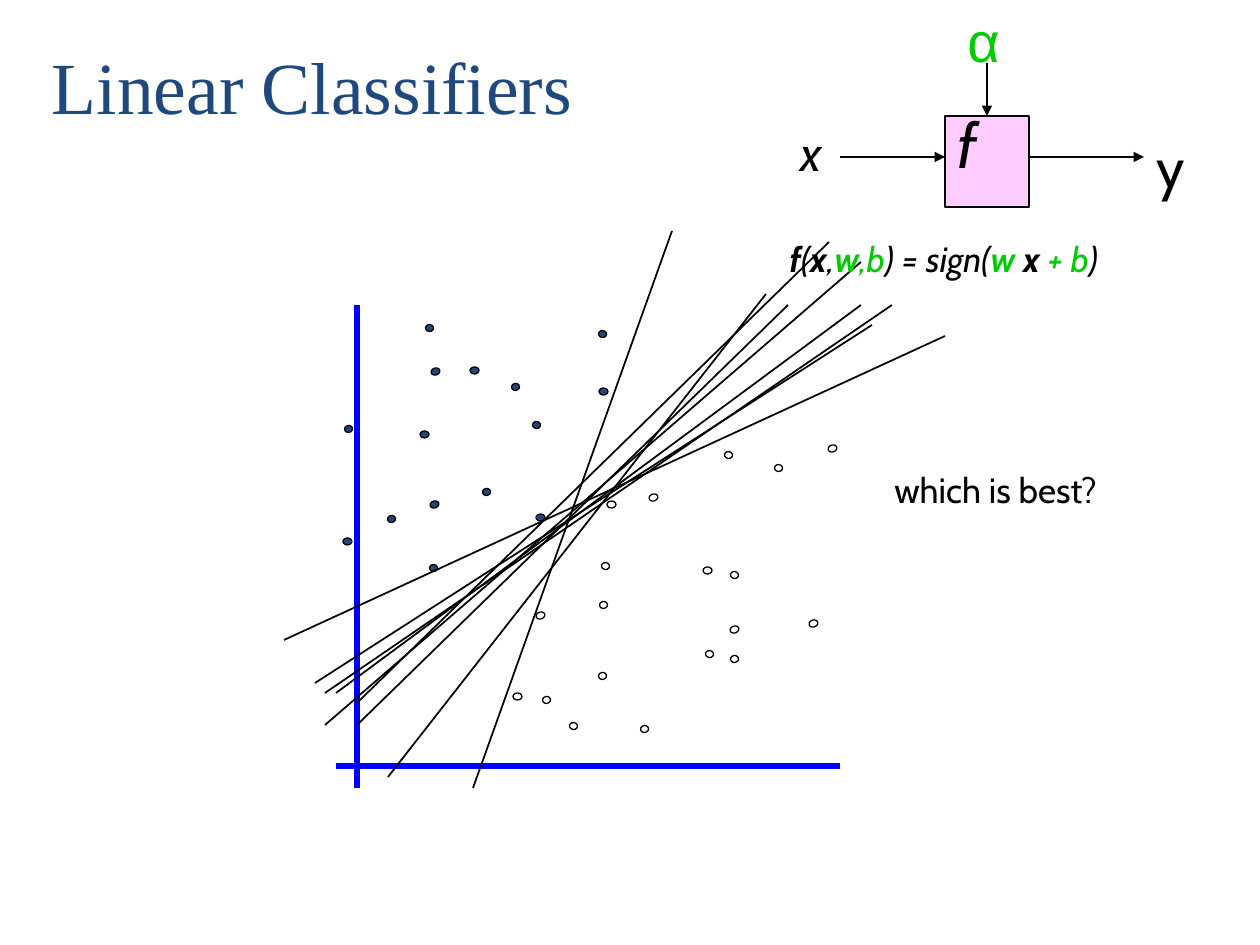
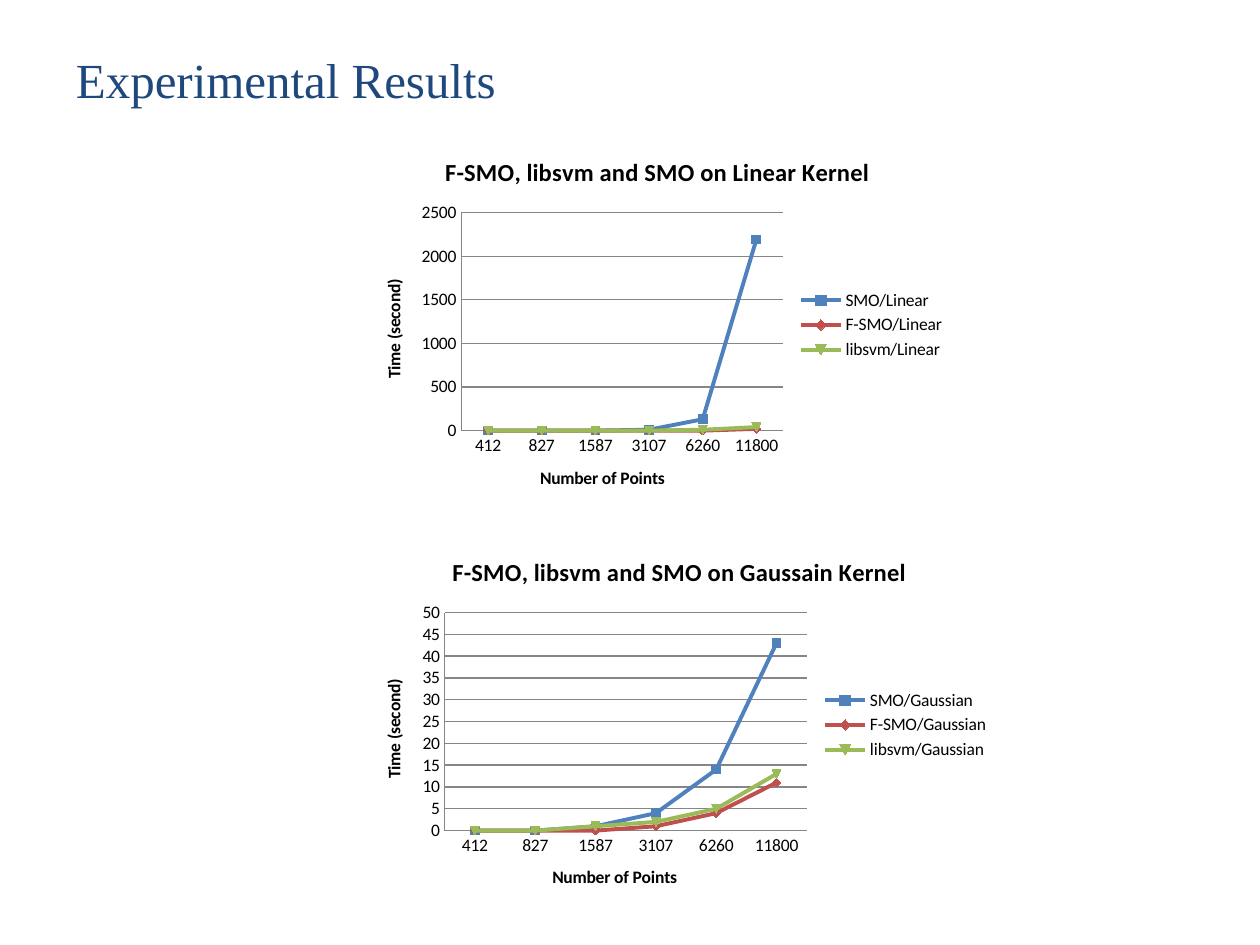
"""Build two slides: linear classifiers and experimental results."""
from lxml import etree
from pptx import Presentation
from pptx import util as u
from pptx.chart.data import CategoryChartData
from pptx.dml.color import RGBColor
from pptx.enum import chart as ch
from pptx.enum import shapes, text
from pptx.oxml.ns import qn

COLORS = {"title": "1F497D", "ink": "000000", "paper": "FFFFFF", "axis": "0000FF",
          "param": "00CC00", "box": "FFCCFF", "grid": "868686"}
SERIES_COLORS = ["4F81BD", "C0504D", "9BBB59"]
TITLE_FONT, BODY_FONT, CHART_FONT = "Times New Roman", "Cabin", "Calibri"
INSET = 13

AXES = [(357, 305, 357, 788), (336, 766, 840, 766)]
SEPARATORS = [
    (473, 788, 672, 231), (315, 683, 872, 325), (357, 725, 788, 305),
    (284, 640, 945, 336), (336, 693, 861, 305), (325, 725, 861, 262),
    (357, 703, 829, 242), (388, 777, 766, 294), (325, 693, 892, 305),
]
DOTS = [
    {"angle": 0, "size": (9, 7),
     "title": [(343, 538), (599, 388), (470, 367), (536, 514), (420, 431)],
     "paper": [(513, 693), (607, 501), (703, 567)]},
    {"angle": 341.4, "size": (9, 7),
     "title": [(431, 368), (430, 501)],
     "paper": [(536, 612), (828, 445), (730, 626), (649, 494), (809, 620)]},
    {"angle": 98.3, "size": (7, 8),
     "title": [(533, 421), (430, 564), (599, 330), (426, 324)],
     "paper": [(570, 722), (731, 571), (602, 562), (775, 464), (725, 451), (706, 650)]},
    {"angle": 79.6, "size": (7, 8),
     "title": [(483, 488), (388, 515), (512, 383), (345, 425)],
     "paper": [(641, 725), (599, 672), (600, 601), (543, 696), (731, 655)]},
]
FUNCTION_BOX = (945, 116, 84, 91)
ARROWS = {"x": (840, 157, 945, 157), "alpha": (987, 63, 987, 116),
          "y": (1029, 157, 1144, 157)}
FORMULA = [("f", "ink", "bi"), ("(", "ink", "i"), ("x", "ink", "bi"), (",", "ink", "i"),
           ("w", "param", "bi"), (",b", "param", "i"), (") = sign(", "ink", "i"),
           ("w", "param", "bi"), (" x", "ink", "bi"), (" + b", "param", "i"),
           (")", "ink", "i")]
LABELS = [
    ((882, 462, 305, 55), [("which is best?", "ink", "")], 20, BODY_FONT),
    ((955, 0, 53, 79), [("α", "param", "")], 32, "Arial"),
    ((788, 116, 84, 72), [("x", "ink", "i")], 28, BODY_FONT),
    ((1144, 126, 116, 79), [("y", "ink", "")], 32, BODY_FONT),
    ((777, 231, 441, 54), FORMULA, 20, BODY_FONT),
]

POINTS = ["412", "827", "1587", "3107", "6260", "11800"]
CHARTS = [
    {"at": (357, 536, 645, 378), "title": "F-SMO, libsvm and SMO on Gaussain Kernel",
     "series": {"SMO/Gaussian": [0, 0, 1, 4, 14, 43],
                "F-SMO/Gaussian": [0, 0, 0, 1, 4, 11],
                "libsvm/Gaussian": [0, 0, 1, 2, 5, 13]}},
    {"at": (357, 136, 601, 378), "title": "F-SMO, libsvm and SMO on Linear Kernel",
     "series": {"SMO/Linear": [0, 0, 0, 10, 130, 2190],
                "F-SMO/Linear": [0, 0, 0, 0, 0, 20],
                "libsvm/Linear": [0, 0, 0, 0, 10, 40]}},
]


def px(*values):
    return [u.Emu(round(v * 914400 / 126)) for v in values]


def rgb(name):
    return RGBColor.from_string(COLORS.get(name, name))


def style(font, size, name, color, marks=""):
    font.size, font.name = u.Pt(size), name
    font.bold, font.italic = "b" in marks, "i" in marks
    font.color.rgb = rgb(color)


def add_titled_slide(prs, title, at, size, anchor, indent=INSET):
    s = prs.slides.add_slide(prs.slide_layouts[5])
    sp = s.shapes.title
    sp.left, sp.top, sp.width, sp.height = px(*at)
    tf = sp.text_frame
    tf.text = title
    tf.auto_size = text.MSO_AUTO_SIZE.NONE
    tf.vertical_anchor = anchor
    tf.margin_left, = px(indent)
    p = tf.paragraphs[0]
    p.alignment = text.PP_ALIGN.LEFT
    style(p.runs[0].font, size, TITLE_FONT, "title")
    return s


def add_line(s, ends, color="ink", width=1, arrow=False):
    line = s.shapes.add_connector(shapes.MSO_CONNECTOR.STRAIGHT, *px(*ends))
    line.line.color.rgb = rgb(color)
    line.line.width = u.Pt(width)
    if arrow:
        etree.SubElement(line.line._get_or_add_ln(), qn("a:tailEnd"), type="triangle")
    etree.SubElement(line._element.spPr, qn("a:effectLst"))
    return line


def add_solid(s, kind, at, fill, width):
    sp = s.shapes.add_shape(kind, *px(*at))
    sp.shadow.inherit = False
    sp.fill.solid()
    sp.fill.fore_color.rgb = rgb(fill)
    sp.line.color.rgb = rgb("ink")
    sp.line.width = u.Pt(width)
    return sp


def write_runs(tf, runs, size, font):
    tf.word_wrap = True
    p = tf.paragraphs[0]
    p.alignment = text.PP_ALIGN.LEFT
    for content, color, marks in runs:
        r = p.add_run()
        r.text = content
        style(r.font, size, font, color, marks)


def add_dots(s):
    for group in DOTS:
        for fill in ("title", "paper"):
            for spot in group[fill]:
                dot = add_solid(s, shapes.MSO_SHAPE.OVAL, spot + group["size"], fill, 0.75)
                dot.rotation = group["angle"]


def add_function_diagram(s):
    box = add_solid(s, shapes.MSO_SHAPE.RECTANGLE, FUNCTION_BOX, "box", 1)
    tf = box.text_frame
    tf.vertical_anchor = text.MSO_ANCHOR.MIDDLE
    tf.margin_top, tf.margin_bottom = px(0, 37)
    write_runs(tf, [("f", "ink", "i")], 36, BODY_FONT)
    arrows = {name: add_line(s, ends, arrow=True) for name, ends in ARROWS.items()}
    arrows["alpha"].end_connect(box, 0)


def format_axis(axis, title):
    axis.major_tick_mark = axis.minor_tick_mark = ch.XL_TICK_MARK.NONE
    axis.format.line.color.rgb = rgb("grid")
    tf = axis.axis_title.text_frame
    tf.text = title
    style(tf.paragraphs[0].runs[0].font, 10, CHART_FONT, "ink", "b")


def add_timing_chart(s, info):
    data = CategoryChartData()
    data.categories = POINTS
    for name, values in info["series"].items():
        data.add_series(name, values)
    kind = ch.XL_CHART_TYPE.LINE_MARKERS
    chart = s.shapes.add_chart(kind, *px(*info["at"]), data).chart
    style(chart.font, 10, CHART_FONT, "ink")
    tf = chart.chart_title.text_frame
    tf.text = info["title"]
    style(tf.paragraphs[0].runs[0].font, 14, CHART_FONT, "ink", "b")
    chart.has_legend = True
    chart.legend.position = ch.XL_LEGEND_POSITION.RIGHT
    chart.legend.include_in_layout = False
    format_axis(chart.category_axis, "Number of Points")
    format_axis(chart.value_axis, "Time (second)")
    chart.value_axis.major_gridlines.format.line.color.rgb = rgb("grid")
    plot = chart.plots[0]
    plot.vary_by_categories = False
    for series, color in zip(plot.series, SERIES_COLORS):
        series.smooth = False
        series.format.line.width = u.Pt(2.25)
        series.format.line.color.rgb = rgb(color)
        mark = series.marker.format
        mark.fill.solid()
        mark.fill.fore_color.rgb = rgb(color)
        mark.line.color.rgb = rgb(color)


def main():
    prs = Presentation()
    prs.slide_width, prs.slide_height = px(1260, 945)

    s = add_titled_slide(prs, "Linear Classifiers", (21, 42, 640, 94), 42,
                         text.MSO_ANCHOR.BOTTOM, indent=31)
    for ends in AXES:
        add_line(s, ends, "axis", 3)
    add_dots(s)
    for ends in SEPARATORS:
        add_line(s, ends)
    add_function_diagram(s)
    for at, runs, size, font in LABELS:
        write_runs(s.shapes.add_textbox(*px(*at)).text_frame, runs, size, font)

    s = add_titled_slide(prs, "Experimental Results", (63, 0, 1071, 158), 28,
                         text.MSO_ANCHOR.MIDDLE)
    for info in CHARTS:
        add_timing_chart(s, info)
    prs.save("out.pptx")


if __name__ == "__main__":
    main()
